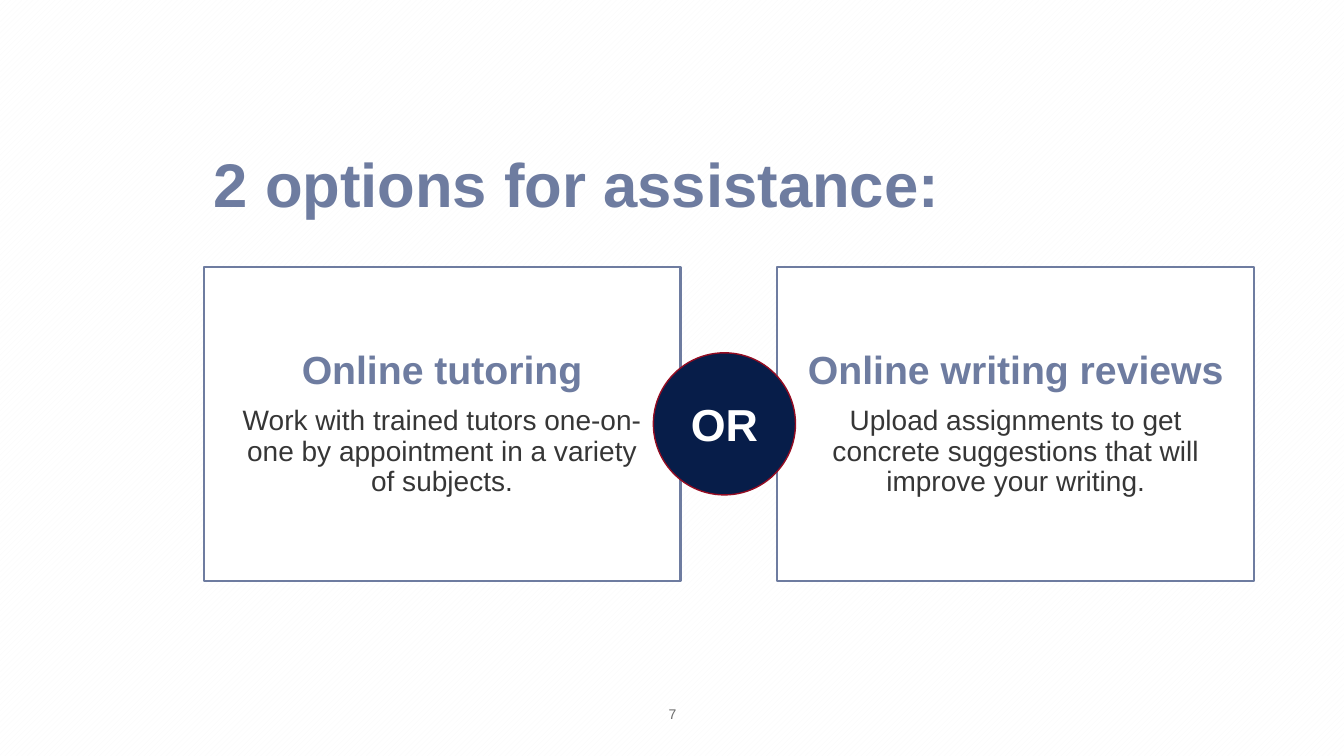
from dataclasses import dataclass

from pptx import Presentation
from pptx.dml.color import RGBColor
from pptx.enum.dml import MSO_PATTERN
from pptx.enum.shapes import MSO_SHAPE
from pptx.enum.text import MSO_ANCHOR, PP_ALIGN
from pptx.util import Inches, Pt

RECT, OVAL = MSO_SHAPE.RECTANGLE, MSO_SHAPE.OVAL
CENTER, LEFT, MIDDLE = PP_ALIGN.CENTER, PP_ALIGN.LEFT, MSO_ANCHOR.MIDDLE
UP_DIAGONAL = MSO_PATTERN.WIDE_UPWARD_DIAGONAL

WHITE = RGBColor(0xFF, 0xFF, 0xFF)
PALE = RGBColor(0xF9, 0xF9, 0xF9)
SLATE = RGBColor(0x6E, 0x7C, 0xA0)
NAVY = RGBColor(0x07, 0x1D, 0x49)
RED = RGBColor(0x94, 0x0C, 0x22)
DARK = RGBColor(0x36, 0x36, 0x36)
GRAY = RGBColor(0x6C, 0x6C, 0x6C)

FONT = "Arial"
CARD_LEFT, CARD_TOP, CARD_W, CARD_H = 2.02, 2.65, 4.73, 3.11
CARD_STEP = 5.69
CARD_INSET = Inches(0.3)


@dataclass
class Option:
    heading: str
    detail: str


OPTIONS = [
    Option("Online tutoring",
           "Work with trained tutors one-on-one by appointment "
           "in a variety of subjects."),
    Option("Online writing reviews",
           "Upload assignments to get concrete suggestions "
           "that will improve your writing."),
]


def write(p, text: str, size: float, color: RGBColor, bold: bool = False,
          align=CENTER) -> None:
    p.alignment = align
    r = p.add_run()
    r.text = text
    r.font.name = FONT
    r.font.size = Pt(size)
    r.font.bold = bold
    r.font.color.rgb = color


def add_box(slide, kind, left: float, top: float, width: float, height: float,
            fill: RGBColor, line: RGBColor, weight: float):
    sp = slide.shapes.add_shape(kind, Inches(left), Inches(top),
                                Inches(width), Inches(height))
    sp.shadow.inherit = False
    sp.fill.solid()
    sp.fill.fore_color.rgb = fill
    sp.line.color.rgb = line
    sp.line.width = Pt(weight)
    tf = sp.text_frame
    tf.word_wrap = True
    tf.vertical_anchor = MIDDLE
    return tf


def add_card(slide, left: float, option: Option) -> None:
    tf = add_box(slide, RECT, left, CARD_TOP, CARD_W, CARD_H, WHITE, SLATE, 1.5)
    tf.margin_left = tf.margin_right = CARD_INSET
    tf.margin_top = tf.margin_bottom = CARD_INSET
    heading, detail = tf.paragraphs[0], tf.add_paragraph()
    heading.line_spacing = detail.line_spacing = 0.9
    detail.space_before = Pt(10)
    write(heading, option.heading, 28, SLATE, bold=True)
    write(detail, option.detail, 20, DARK)


def main() -> None:
    prs = Presentation()
    prs.slide_width, prs.slide_height = Inches(13.33), Inches(7.5)
    s = prs.slides.add_slide(prs.slide_layouts[5])

    # Background
    fill = s.background.fill
    fill.patterned()
    fill.pattern = UP_DIAGONAL
    fill.fore_color.rgb = PALE
    fill.back_color.rgb = WHITE

    # Title
    title = s.shapes.title
    title.left, title.top = Inches(2.02), Inches(1.14)
    title.width, title.height = Inches(8.11), Inches(1.45)
    tf = title.text_frame
    tf.word_wrap = True
    tf.vertical_anchor = MIDDLE
    tf.paragraphs[0].line_spacing = 0.9
    write(tf.paragraphs[0], "2 options for assistance:", 44, SLATE, True, LEFT)

    # Option cards
    for i, option in enumerate(OPTIONS):
        add_card(s, CARD_LEFT + i * CARD_STEP, option)

    # Badge between the cards
    badge = add_box(s, OVAL, 6.48, 3.5, 1.41, 1.41, NAVY, RED, 1)
    write(badge.paragraphs[0], "OR", 32, WHITE, bold=True)

    # Slide number
    number = s.shapes.add_textbox(Inches(5.17), Inches(6.95),
                                  Inches(3), Inches(0.4))
    number.text_frame.word_wrap = True
    write(number.text_frame.paragraphs[0], "7", 10, GRAY)

    prs.save("out.pptx")


if __name__ == "__main__":
    main()
